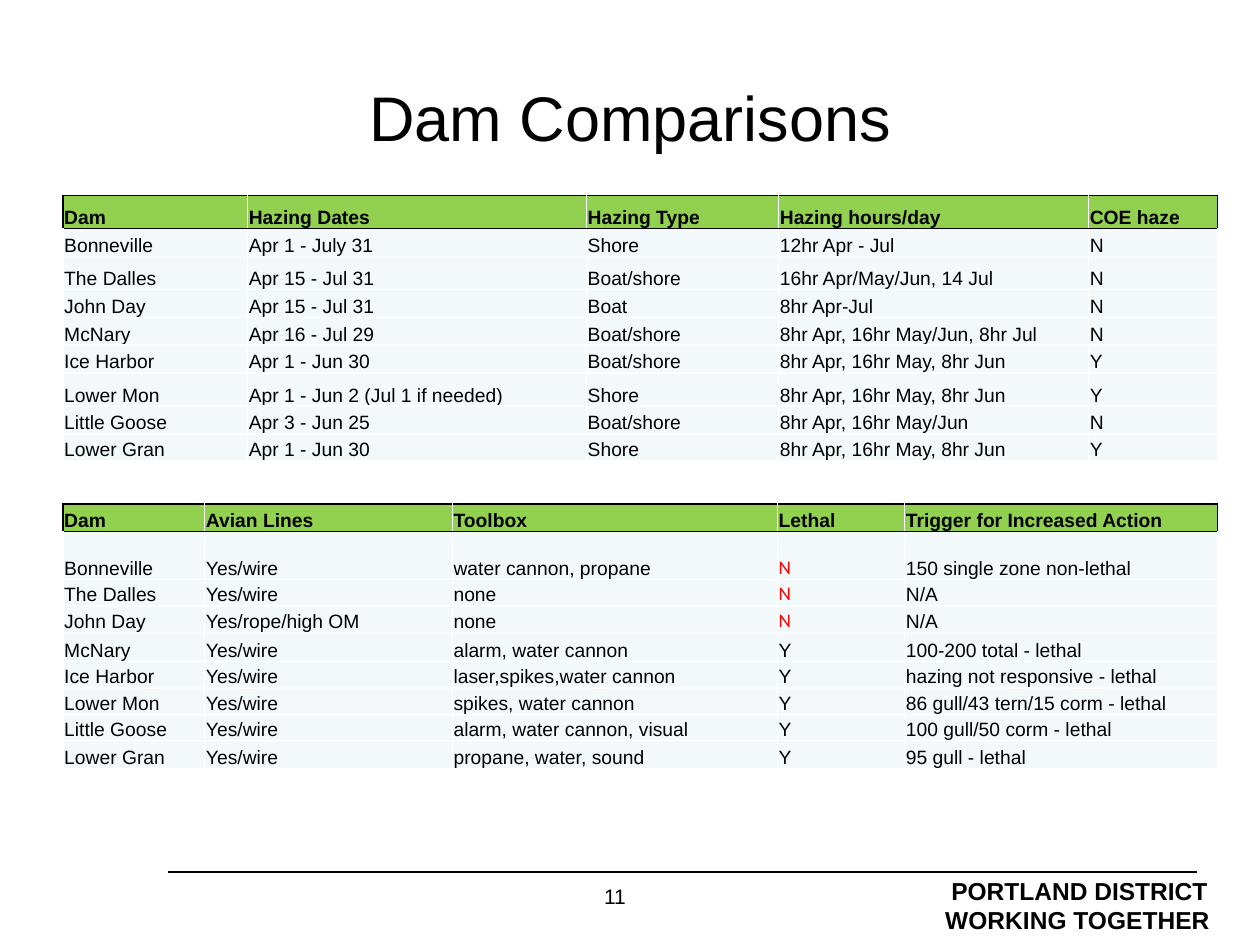
from lxml import etree
from pptx import Presentation
from pptx import util as u
from pptx.dml.color import RGBColor
from pptx.enum import shapes, text
from pptx.oxml.ns import qn

BLACK = RGBColor(0x00, 0x00, 0x00)
WHITE = RGBColor(0xFF, 0xFF, 0xFF)
RED = RGBColor(0xFF, 0x00, 0x00)
GREEN = RGBColor(0x92, 0xD0, 0x50)
PALE = RGBColor(0xF3, 0xF9, 0xFA)

prs = Presentation()
prs.slide_width, prs.slide_height = u.Inches(10), u.Inches(7.5)
s = prs.slides.add_slide(prs.slide_layouts[5])
UNIT = prs.slide_width / 100  # grid of 100 columns by 75 rows


def grid(*counts):
    return [round(n * UNIT) for n in counts]


def add_run(p, words, size, bold=False, font="Arial", color=BLACK):
    r = p.add_run()
    r.text = words
    r.font.size, r.font.bold, r.font.name = u.Pt(size), bold, font
    r.font.color.rgb = color


# Title
title = s.shapes.title
title.left, title.top, title.width, title.height = grid(5, 3, 90, 12.5)
tf = title.text_frame
tf.vertical_anchor = text.MSO_ANCHOR.MIDDLE
p = tf.paragraphs[0]
p.alignment = text.PP_ALIGN.CENTER
add_run(p, "Dam Comparisons", 36)

# Tables: top, column widths, row heights (grid units), rows
hazing = [
    ("Dam", "Hazing Dates", "Hazing Type", "Hazing hours/day", "COE haze"),
    ("Bonneville", "Apr 1 - July 31", "Shore", "12hr Apr - Jul", "N"),
    ("The Dalles", "Apr 15 - Jul 31", "Boat/shore", "16hr Apr/May/Jun, 14 Jul", "N"),
    ("John Day", "Apr 15 - Jul 31", "Boat", "8hr Apr-Jul", "N"),
    ("McNary", "Apr 16 - Jul 29", "Boat/shore", "8hr Apr, 16hr May/Jun, 8hr Jul", "N"),
    ("Ice Harbor", "Apr 1 - Jun 30", "Boat/shore", "8hr Apr, 16hr May, 8hr Jun", "Y"),
    ("Lower Mon", "Apr 1 - Jun 2 (Jul 1 if needed)", "Shore", "8hr Apr, 16hr May, 8hr Jun", "Y"),
    ("Little Goose", "Apr 3 - Jun 25", "Boat/shore", "8hr Apr, 16hr May/Jun", "N"),
    ("Lower Gran", "Apr 1 - Jun 30", "Shore", "8hr Apr, 16hr May, 8hr Jun", "Y"),
]
actions = [
    ("Dam", "Avian Lines", "Toolbox", "Lethal", "Trigger for Increased Action"),
    ("Bonneville", "Yes/wire", "water cannon, propane", "N", "150 single zone non-lethal"),
    ("The Dalles", "Yes/wire", "none", "N", "N/A"),
    ("John Day", "Yes/rope/high OM", "none", "N", "N/A"),
    ("McNary", "Yes/wire", "alarm, water cannon", "Y", "100-200 total - lethal"),
    ("Ice Harbor", "Yes/wire", "laser,spikes,water cannon", "Y", "hazing not responsive - lethal"),
    ("Lower Mon", "Yes/wire", "spikes, water cannon", "Y", "86 gull/43 tern/15 corm - lethal"),
    ("Little Goose", "Yes/wire", "alarm, water cannon, visual", "Y", "100 gull/50 corm - lethal"),
    ("Lower Gran", "Yes/wire", "propane, water, sound", "Y", "95 gull - lethal"),
]
tables = [
    (15.5, (14.65, 26.9, 15.25, 24.6, 10.25),
     (2.65, 2.2, 2.65, 2.2, 2.2, 2.2, 2.65, 2.2, 2.15), hazing),
    (40, (11.25, 19.65, 25.8, 10.1, 24.85),
     (2.2, 3.8, 2.1, 2.1, 2.3, 2.1, 2.1, 2.1, 2.2), actions),
]
for top, widths, heights, rows in tables:
    frame = s.shapes.add_table(len(rows), len(widths),
                               *grid(5, top, sum(widths), sum(heights)))
    tbl = frame.table
    tbl.horz_banding = False
    for col, width in zip(tbl.columns, grid(*widths)):
        col.width = width
    for row, height in zip(tbl.rows, grid(*heights)):
        row.height = height
    for i, row in enumerate(rows):
        for j, words in enumerate(row):
            cell = tbl.cell(i, j)
            header = i == 0
            cell.margin_left = cell.margin_top = cell.margin_right = u.Inches(0.01)
            cell.margin_bottom = 0
            cell.vertical_anchor = text.MSO_ANCHOR.BOTTOM

            # Black frame round the header row, white lines elsewhere
            dark = {"a:lnL": header and j == 0,
                    "a:lnR": header and j == len(row) - 1,
                    "a:lnT": i <= 1,
                    "a:lnB": header}
            tcPr = cell._tc.get_or_add_tcPr()
            for tag, is_dark in dark.items():
                ln = etree.SubElement(tcPr, qn(tag), w=str(u.Pt(1)))
                fill = etree.SubElement(ln, qn("a:solidFill"))
                etree.SubElement(fill, qn("a:srgbClr"), val=str(BLACK if is_dark else WHITE))
            cell.fill.solid()
            cell.fill.fore_color.rgb = GREEN if header else PALE

            not_lethal = rows[0][j] == "Lethal" and words == "N"
            add_run(cell.text_frame.paragraphs[0], words, 11, header,
                    "Calibri" if not_lethal else "Arial",
                    RED if not_lethal else BLACK)

# Footer rule
rule = s.shapes.add_connector(shapes.MSO_CONNECTOR.STRAIGHT, *grid(95, 69.2, 13.3, 69.2))
rule.line.color.rgb = BLACK
rule.line.width = u.Pt(0.75)
etree.SubElement(rule._element.spPr, qn("a:effectLst"))

# Footer texts: box, inset, alignment, size, bold, words
footers = [
    ((75.5, 69.5, 22.7, 2.4), 0, text.PP_ALIGN.LEFT, 14, True, "PORTLAND DISTRICT"),
    ((68.3, 71.8, 27.7, 2.3), 0, text.PP_ALIGN.RIGHT, 14, True, "WORKING TOGETHER"),
    ((41.7, 69.6, 14.2, 3), 0.05, text.PP_ALIGN.CENTER, 12, False, "11"),
]
for box, inset, align, size, bold, words in footers:
    tf = s.shapes.add_textbox(*grid(*box)).text_frame
    tf.word_wrap = True
    tf.margin_left = tf.margin_right = tf.margin_top = tf.margin_bottom = u.Inches(inset)
    p = tf.paragraphs[0]
    p.alignment = align
    add_run(p, words, size, bold)

prs.save("out.pptx")
